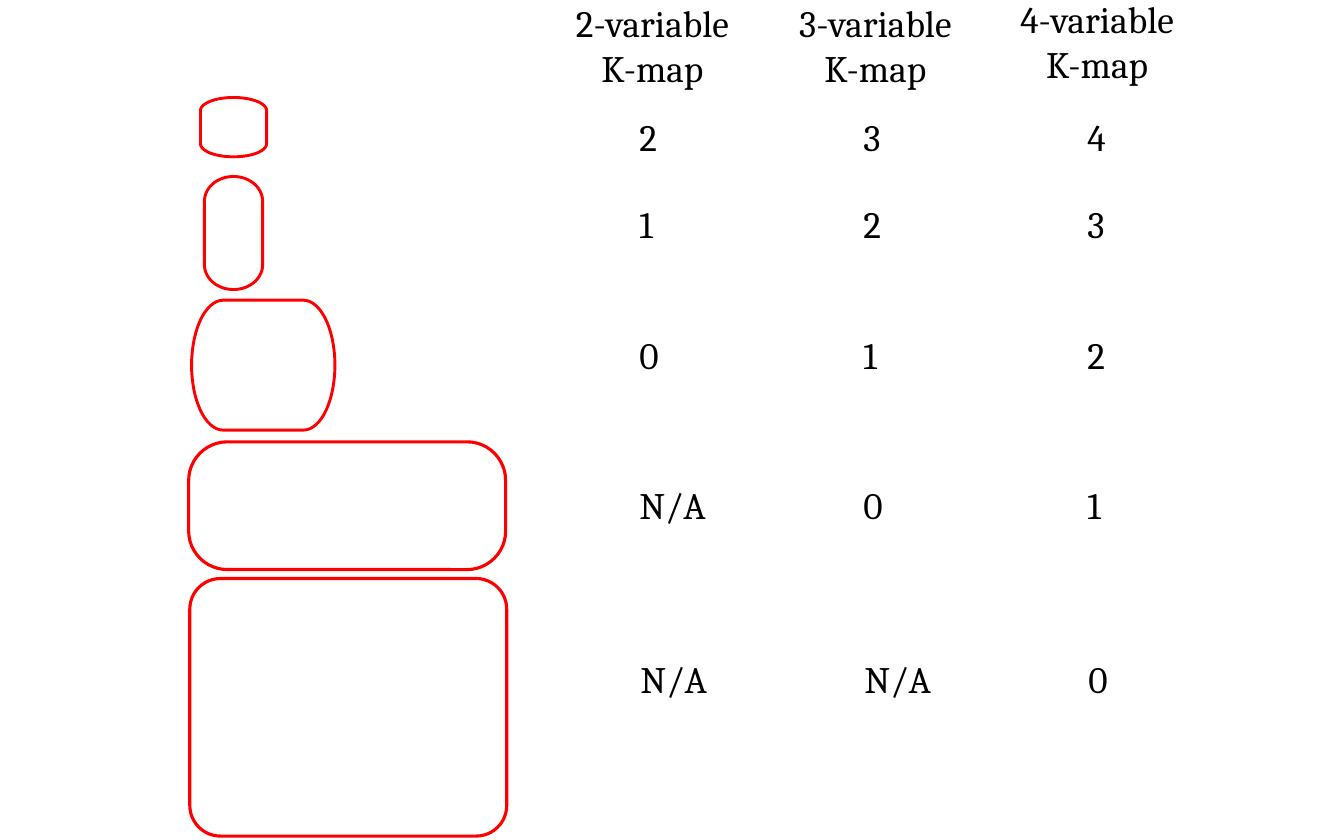
from math import cos, radians, sin

from pptx import Presentation
from pptx.dml.color import RGBColor
from pptx.enum.shapes import MSO_SHAPE
from pptx.enum.text import MSO_AUTO_SIZE, PP_ALIGN
from pptx.util import Inches, Pt

RED = RGBColor(0xFF, 0x00, 0x00)
BLACK = RGBColor(0x00, 0x00, 0x00)

FONT = {"name": "Cambria", "size": Pt(24)}
CAP_RATIO = 0.22  # width of a barrel's curved end, as a share of its length

# Group outlines: box (left, top, width, height) before rotation
BARRELS = [
    ((1.82, 0.84, 0.53, 0.59), 270),
    ((1.58, 1.82, 1.01, 0.52), 270),
    ((1.71, 2.68, 1.28, 1.16), 180),
]
ROUNDED = [
    ((2.53, 3.1, 1.14, 2.83), 0.302),
    ((1.96, 4.9, 2.3, 2.83), 0.119),
]

HEADERS = [
    ("2-variable", 5, -0.05),
    ("3-variable", 6.99, -0.05),
    ("4-variable", 8.97, -0.08),
]
ROWS = [
    (5.61, 0.97, ["2", "3", "4"]),
    (5.61, 1.75, ["1", "2", "3"]),
    (5.61, 2.92, ["0", "1", "2"]),
    (5.61, 4.26, ["N/A", "0", "1"]),
    (5.62, 5.81, ["N/A", "N/A", "0"]),
]


def style_outline(sp, rotation, width):
    sp.rotation = rotation
    sp.shadow.inherit = False
    sp.fill.background()
    sp.line.color.rgb = RED
    sp.line.width = Pt(width)


def add_barrel(s, box, rotation):
    """Straight long sides, closed by half an ellipse at each end."""
    left, top, width, height = box
    cap = CAP_RATIO * width
    points = []
    for center, start in ((left + width - cap, -90), (left + cap, 90)):
        for angle in range(start, start + 181, 6):
            a = radians(angle)
            points.append((Inches(center + cap * cos(a)),
                           Inches(top + height / 2 * (1 + sin(a)))))
    builder = s.shapes.build_freeform(*points[0])
    builder.add_line_segments(points[1:], close=True)
    style_outline(builder.convert_to_shape(), rotation, 1.88)


def add_rounded(s, box, radius):
    sp = s.shapes.add_shape(MSO_SHAPE.ROUNDED_RECTANGLE, *map(Inches, box))
    sp.adjustments[0] = radius
    style_outline(sp, 270, 2)


def add_text(s, box, lines, align):
    tf = s.shapes.add_textbox(*map(Inches, box)).text_frame
    tf.word_wrap = True
    tf.auto_size = MSO_AUTO_SIZE.SHAPE_TO_FIT_TEXT
    for i, line in enumerate(lines):
        p = tf.add_paragraph() if i else tf.paragraphs[0]
        p.alignment = align
        # Default tab stops one inch apart
        p._p.get_or_add_pPr().set("defTabSz", str(Inches(1)))
        r = p.add_run()
        r.text = line
        for key, value in FONT.items():
            setattr(r.font, key, value)
        r.font.color.rgb = BLACK


def add_groups(s):
    for box, rotation in BARRELS:
        add_barrel(s, box, rotation)
    for box, radius in ROUNDED:
        add_rounded(s, box, radius)


def add_counts(s):
    # Column headings
    for title, left, top in HEADERS:
        add_text(s, (left, top, 1.65, 0.91), [title, "K-map"], PP_ALIGN.CENTER)
    # Literal counts, one row for each group size
    for left, top, values in ROWS:
        add_text(s, (left, top, 4.41, 0.5), ["\t\t".join(values)], PP_ALIGN.LEFT)


def main():
    prs = Presentation()
    prs.slide_width, prs.slide_height = Inches(12), Inches(7.5)
    s = prs.slides.add_slide(prs.slide_layouts[6])
    add_groups(s)
    add_counts(s)
    prs.save("out.pptx")


if __name__ == "__main__":
    main()
